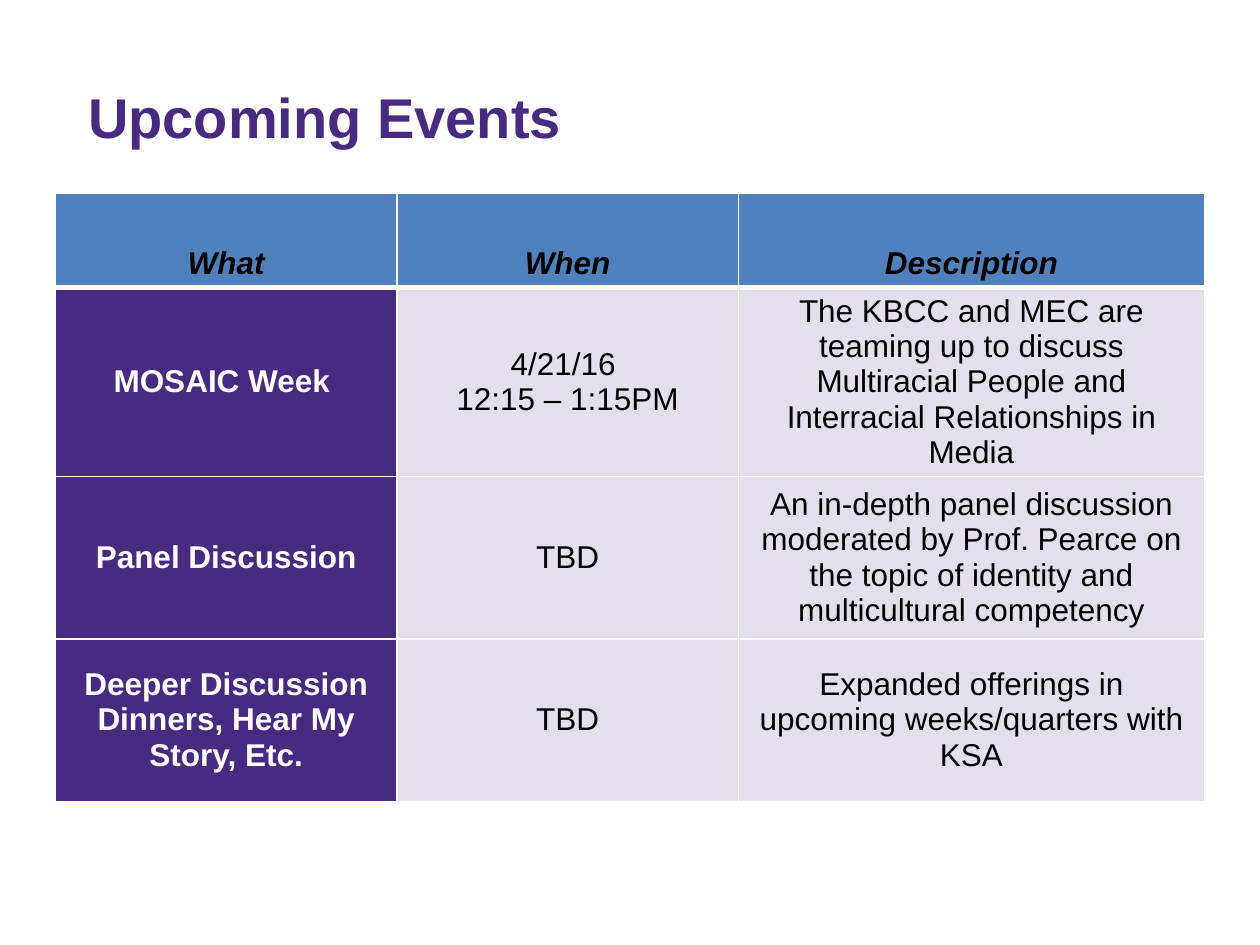
import pptx
import pptx.util
import pptx.dml.color
import pptx.enum.text
import pptx.oxml.ns
import lxml.etree

COLOURS = {
    "purple": "482A80",
    "blue": "4F81BD",
    "lilac": "E5DFEC",
    "white": "FFFFFF",
    "black": "000000",
}
ANCHOR = pptx.enum.text.MSO_ANCHOR
ALIGN = pptx.enum.text.PP_ALIGN
BASE_FONT = {"name": "Arial", "size": pptx.util.Pt(18), "italic": False}
HEADER = {
    "fill": "blue", "text": "black", "anchor": ANCHOR.BOTTOM, "rule": 3,
    "font": {"bold": True, "italic": True},
}
EVENT_NAME = {
    "fill": "purple", "text": "white", "anchor": ANCHOR.MIDDLE, "rule": 1,
    "font": {"bold": True},
}
DETAIL = {
    "fill": "lilac", "text": "black", "anchor": ANCHOR.MIDDLE, "rule": 1,
    "font": {"bold": False},
}
EVENTS = [
    ["What", "When", "Description"],
    ["MOSAIC Week ", "4/21/16 \n12:15 – 1:15PM",
     "The KBCC and MEC are teaming up to discuss Multiracial People and "
     "Interracial Relationships in Media"],
    ["Panel Discussion", "TBD",
     "An in-depth panel discussion moderated by Prof. Pearce on the topic of "
     "identity and multicultural competency"],
    ["Deeper Discussion Dinners, Hear My Story, Etc.", "TBD",
     "Expanded offerings in upcoming weeks/quarters with KSA"],
]
COLUMN_WIDTHS = [2.71, 2.71, 3.7]
ROW_HEIGHTS = [0.75, 1.29, 1.29, 1.29]


def colour(name):
    return pptx.dml.color.RGBColor.from_string(COLOURS[name])


def set_attributes(target, values):
    for name, value in values.items():
        setattr(target, name, value)


def format_paragraphs(frame, alignment, font_values, text_colour):
    for paragraph in frame.paragraphs:
        paragraph.alignment = alignment
        for run in paragraph.runs:
            set_attributes(run.font, {**BASE_FONT, **font_values})
            run.font.color.rgb = colour(text_colour)


def set_borders(cell, points):
    properties = cell._tc.get_or_add_tcPr()
    qualified = pptx.oxml.ns.qn
    for index, (side, width) in enumerate(points.items()):
        line = lxml.etree.Element(qualified(f"a:ln{side}"), w=str(pptx.util.Pt(width)))
        fill = lxml.etree.SubElement(line, qualified("a:solidFill"))
        lxml.etree.SubElement(fill, qualified("a:srgbClr"), val=COLOURS["white"])
        properties.insert(index, line)


def place_title(slide, box, text):
    title = slide.shapes.title
    set_attributes(title, dict(zip(("left", "top", "width", "height"), box)))
    frame = title.text_frame
    frame.text = text
    frame.vertical_anchor = ANCHOR.MIDDLE
    format_paragraphs(
        frame, ALIGN.LEFT, {"size": pptx.util.Pt(32), "bold": True}, "purple")


def fill_cell(cell, text, style, top_rule):
    cell.text = text
    cell.vertical_anchor = style["anchor"]
    cell.fill.solid()
    cell.fill.fore_color.rgb = colour(style["fill"])
    set_borders(cell, {"L": 1, "R": 1, "T": top_rule, "B": style["rule"]})
    format_paragraphs(cell.text_frame, ALIGN.CENTER, style["font"], style["text"])


def place_events(slide, box):
    left, top, width, height = box
    table = slide.shapes.add_table(
        len(ROW_HEIGHTS), len(COLUMN_WIDTHS), left, top, width, height).table
    for column, share in zip(table.columns, COLUMN_WIDTHS):
        column.width = int(width * share / sum(COLUMN_WIDTHS))
    for row, share in zip(table.rows, ROW_HEIGHTS):
        row.height = int(height * share / sum(ROW_HEIGHTS))
    for row_index, texts in enumerate(EVENTS):
        for column_index, text in enumerate(texts):
            style = HEADER if row_index == 0 else DETAIL if column_index else EVENT_NAME
            top_rule = HEADER["rule"] if row_index == 1 else 1
            fill_cell(table.cell(row_index, column_index), text, style, top_rule)


def main():
    presentation = pptx.Presentation()
    presentation.slide_width = pptx.util.Inches(10)
    presentation.slide_height = pptx.util.Inches(7.5)
    slide = presentation.slides.add_slide(presentation.slide_layouts[5])
    inches = pptx.util.Inches
    place_title(slide, [inches(n) for n in (0.6, 0.3, 8.9, 1.25)], "Upcoming Events")
    table_size = sum(COLUMN_WIDTHS), sum(ROW_HEIGHTS)
    place_events(slide, [inches(n) for n in (0.44, 1.53, *table_size)])
    presentation.save("out.pptx")


if __name__ == "__main__":
    main()
